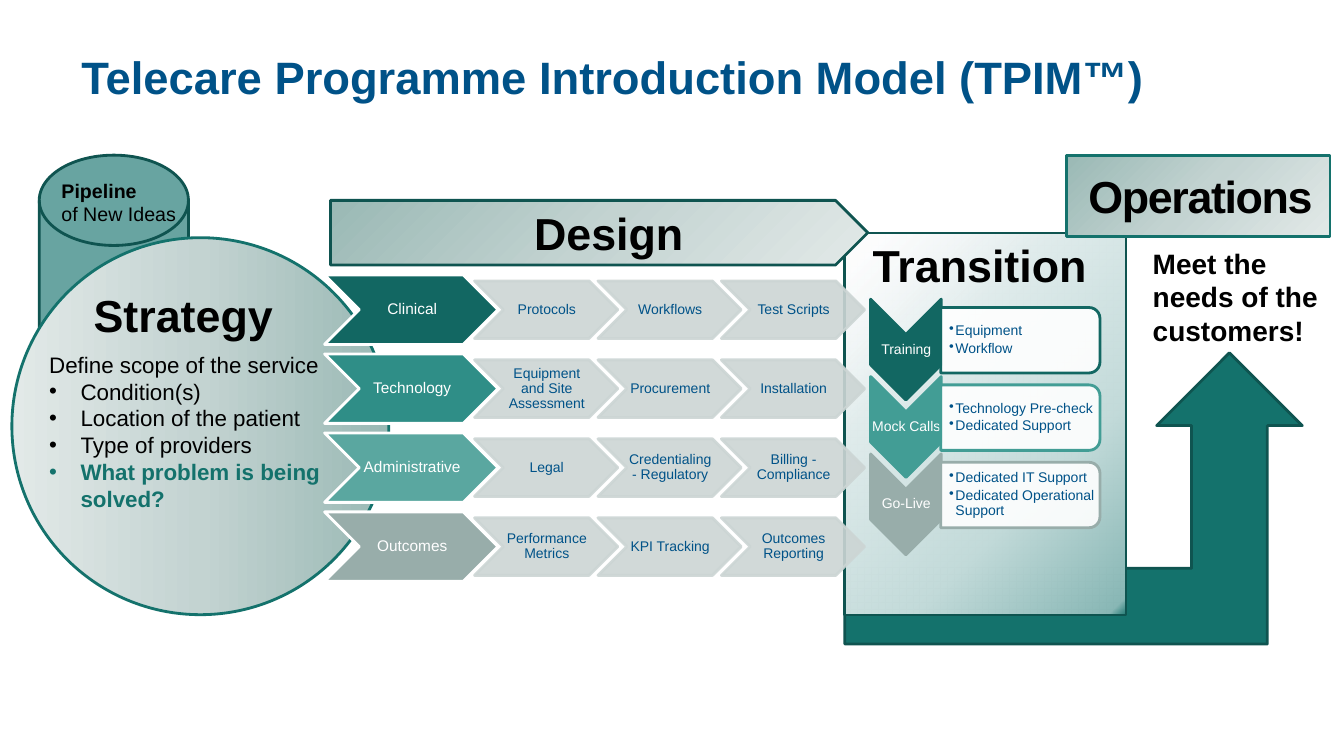
"""Build the telecare programme introduction model slide."""
from dataclasses import dataclass
from typing import Any, Optional

import lxml.etree
import pptx
import pptx.dml.color
import pptx.enum.shapes
import pptx.enum.text
import pptx.oxml.ns
import pptx.util

Cm = pptx.util.Cm
Pt = pptx.util.Pt
qn = pptx.oxml.ns.qn
Preset = pptx.enum.shapes.MSO_SHAPE
Anchor = pptx.enum.text.MSO_ANCHOR
Align = pptx.enum.text.PP_ALIGN

TEAL, DARK_TEAL, NAVY, BLACK, WHITE = "14726C", "0F5450", "005288", "000000", "FFFFFF"
PALE, GREY = "CCD5D4", "98ADAA"


@dataclass(frozen=True)
class Box:
    left: float
    top: float
    width: float
    height: float


@dataclass(frozen=True)
class Gradient:
    angle: int
    stops: tuple[tuple[int, str, int], ...]


@dataclass(frozen=True)
class Style:
    size: float
    color: str = BLACK
    bold: bool = False
    align: Any = Align.LEFT
    spacing: float = 1.0
    after: float = 0
    hang: float = 0
    tracking: int = 0


@dataclass(frozen=True)
class DesignRow:
    area: str
    color: str
    steps: tuple[str, str, str]


@dataclass(frozen=True)
class Stage:
    label: str
    color: str
    tasks: tuple[str, str]


@dataclass(frozen=True)
class Heading:
    text: str
    box: Box


MIST = ((0, "9AB9B5", 100), (50, "C3D3D1", 100), (100, "E2E9E8", 100))
STRATEGY_FILL = Gradient(180, MIST)
BANNER_FILL = Gradient(45, MIST)
TRANSITION_FILL = Gradient(225, (
    (0, TEAL, 100), (3, "88B7B5", 100), (32, "C2DAD9", 100),
    (68, "DFEBEB", 100), (96, "FCFCFD", 52)))

DESIGN_ROWS = (
    DesignRow("Clinical", "126762", ("Protocols", "Workflows", "Test Scripts")),
    DesignRow("Technology", "2F8E87",
              ("Equipment and Site Assessment", "Procurement", "Installation")),
    DesignRow("Administrative", "5AA7A0",
              ("Legal", "Credentialing - Regulatory", "Billing - Compliance")),
    DesignRow("Outcomes", GREY,
              ("Performance Metrics", "KPI Tracking", "Outcomes Reporting")),
)
STAGES = (
    Stage("Training", "126762", ("Equipment", "Workflow")),
    Stage("Mock Calls", "429D95", ("Technology Pre-check", "Dedicated Support")),
    Stage("Go-Live", GREY, ("Dedicated IT Support", "Dedicated Operational Support")),
)
HEADINGS = (
    Heading("Strategy", Box(2.11, 7.11, 5.26, 1.63)),
    Heading("Design", Box(13.21, 5.05, 4.29, 1.63)),
    Heading("Transition", Box(21.74, 5.87, 6.17, 1.63)),
)
ROW_PITCH, STEP_PITCH, STAGE_PITCH = 1.99, 3.11, 1.95

HEADING_STYLE = Style(32, bold=True)
AREA_STYLE = Style(11, WHITE, align=Align.CENTER, spacing=0.9)
STEP_STYLE = Style(10, NAVY, align=Align.CENTER, spacing=0.9)
STAGE_STYLE = Style(10, WHITE, align=Align.CENTER, spacing=0.9)
TASK_STYLE = Style(10, NAVY, spacing=0.9, after=1.5, hang=0.16)
TIGHT = (0.03, 0.03, 0.03, 0.03)
DEFAULT_INSETS = (0.25, 0.13, 0.25, 0.13)


def rgb(color: str) -> pptx.dml.color.RGBColor:
    """Turn a hex string into a colour."""
    return pptx.dml.color.RGBColor.from_string(color)


def add_alpha(parent: Any, percent: int) -> None:
    """Make every colour below an element partly transparent."""
    if percent < 100:
        for color in parent.iter(qn("a:srgbClr")):
            lxml.etree.SubElement(color, qn("a:alpha"), val=str(percent * 1000))


def apply_gradient(shape: Any, gradient: Gradient) -> None:
    """Fill a shape with a linear gradient of any number of stops."""
    shape.fill.gradient()
    fill = shape.element.spPr.find(qn("a:gradFill"))
    stops = fill.find(qn("a:gsLst"))
    for old_stop in list(stops):
        stops.remove(old_stop)
    for position, color, alpha in gradient.stops:
        stop = lxml.etree.SubElement(stops, qn("a:gs"), pos=str(position * 1000))
        lxml.etree.SubElement(stop, qn("a:srgbClr"), val=color)
        add_alpha(stop, alpha)
    fill.find(qn("a:lin")).set("ang", str(gradient.angle * 60000))


def draw(slide: Any, preset: Any, box: Box, fill: str | Gradient, line: str,
         fill_alpha: int = 100, line_alpha: int = 100, rotation: float = 0) -> Any:
    """Add a preset shape with a 2 pt outline."""
    shape = slide.shapes.add_shape(
        preset, Cm(box.left), Cm(box.top), Cm(box.width), Cm(box.height))
    shape.shadow.inherit = False
    shape.rotation = rotation
    if isinstance(fill, Gradient):
        apply_gradient(shape, fill)
    else:
        shape.fill.solid()
        shape.fill.fore_color.rgb = rgb(fill)
        add_alpha(shape.element.spPr.find(qn("a:solidFill")), fill_alpha)
    shape.line.color.rgb = rgb(line)
    shape.line.width = Pt(2)
    add_alpha(shape.element.spPr.find(qn("a:ln")), line_alpha)
    return shape


def write(shape: Any, entries: tuple[tuple[str, Style], ...], anchor: Any = Anchor.MIDDLE,
          insets: tuple[float, float, float, float] = DEFAULT_INSETS) -> None:
    """Put styled paragraphs into a shape."""
    frame = shape.text_frame
    frame.word_wrap = True
    frame.auto_size = pptx.enum.text.MSO_AUTO_SIZE.NONE
    frame.vertical_anchor = anchor
    (frame.margin_left, frame.margin_top,
     frame.margin_right, frame.margin_bottom) = map(Cm, insets)
    for index, (text, style) in enumerate(entries):
        paragraph = frame.paragraphs[0] if index == 0 else frame.add_paragraph()
        paragraph.text = text
        paragraph.alignment = style.align
        paragraph.line_spacing = style.spacing
        paragraph.space_before = Pt(0)
        paragraph.space_after = Pt(style.after)
        properties = paragraph._p.get_or_add_pPr()
        properties.set("marL", str(Cm(style.hang)))
        properties.set("indent", str(-Cm(style.hang)))
        if style.hang:
            lxml.etree.SubElement(properties, qn("a:buChar"), char="•")
        else:
            lxml.etree.SubElement(properties, qn("a:buNone"))
        paragraph.font.name = "Arial"
        paragraph.font.size = Pt(style.size)
        paragraph.font.bold = style.bold
        paragraph.font.color.rgb = rgb(style.color)
        if style.tracking:
            properties.find(qn("a:defRPr")).set("spc", str(style.tracking * 100))


def add_text(slide: Any, box: Box, entries: tuple[tuple[str, Style], ...],
             anchor: Any = Anchor.TOP,
             insets: tuple[float, float, float, float] = DEFAULT_INSETS) -> None:
    """Add a text box."""
    label = slide.shapes.add_textbox(
        Cm(box.left), Cm(box.top), Cm(box.width), Cm(box.height))
    write(label, entries, anchor, insets)


def move(shape: Any, box: Box) -> None:
    """Place a placeholder in front of everything drawn so far."""
    shape.left, shape.top = Cm(box.left), Cm(box.top)
    shape.width, shape.height = Cm(box.width), Cm(box.height)
    shape.element.getparent().append(shape.element)


def draw_design_row(slide: Any, row: DesignRow, offset: float) -> None:
    """Draw one area chevron followed by its steps."""
    area = draw(slide, Preset.CHEVRON, Box(8.18, 6.93 + offset, 4.37, 1.75), row.color, WHITE)
    write(area, ((row.area, AREA_STYLE),), insets=(0.05, 0.03, 0, 0.03))
    for column, text in enumerate(row.steps):
        step = draw(slide, Preset.CHEVRON,
                    Box(11.96 + column * STEP_PITCH, 7.08 + offset, 3.61, 1.45),
                    PALE, PALE, fill_alpha=90, line_alpha=90)
        write(step, ((text, STEP_STYLE),), insets=(0.03, 0.03, 0, 0.03))


def draw_stage(slide: Any, stage: Stage, offset: float) -> None:
    """Draw one downward chevron with its task panel."""
    draw(slide, Preset.CHEVRON, Box(21.56, 7.92 + offset, 2.54, 1.78),
         stage.color, stage.color, rotation=90)
    add_text(slide, Box(21.95, 8.43 + offset, 1.78, 0.76),
             ((stage.label, STAGE_STYLE),), Anchor.MIDDLE, TIGHT)
    draw(slide, Preset.ROUND_2_SAME_RECTANGLE, Box(24.89, 6.57 + offset, 1.65, 4.01),
         WHITE, stage.color, fill_alpha=90, rotation=90)
    add_text(slide, Box(23.72, 7.83 + offset, 3.94, 1.47),
             tuple((task, TASK_STYLE) for task in stage.tasks),
             Anchor.MIDDLE, (0.2, 0.03, 0.03, 0.03))


def main() -> None:
    """Assemble and save the slide."""
    deck = pptx.Presentation()
    deck.slide_width, deck.slide_height = Cm(33.87), Cm(19.05)
    slide = deck.slides.add_slide(deck.slide_layouts[1])
    title, scope = slide.placeholders

    draw(slide, Preset.FLOWCHART_MAGNETIC_DISK, Box(0.99, 3.91, 3.76, 6.83),
         TEAL, DARK_TEAL, fill_alpha=64)
    delivery = draw(slide, Preset.BENT_UP_ARROW, Box(21.29, 8.89, 11.53, 7.34), TEAL, DARK_TEAL)
    delivery.adjustments[0] = 0.26
    draw(slide, Preset.RECTANGLE, Box(21.29, 5.87, 7.09, 9.63), TRANSITION_FILL, DARK_TEAL)
    draw(slide, Preset.OVAL, Box(0.3, 5.99, 9.5, 9.5), STRATEGY_FILL, TEAL)
    for index, row in enumerate(DESIGN_ROWS):
        draw_design_row(slide, row, index * ROW_PITCH)
    draw(slide, Preset.PENTAGON, Box(8.33, 5.05, 13.54, 1.63), BANNER_FILL, DARK_TEAL)
    for index, stage in enumerate(STAGES):
        draw_stage(slide, stage, index * STAGE_PITCH)
    for heading in HEADINGS:
        add_text(slide, heading.box, ((heading.text, HEADING_STYLE),))

    operations = draw(slide, Preset.RECTANGLE, Box(26.87, 3.91, 6.65, 2.06), BANNER_FILL, TEAL)
    write(operations, (("Operations", Style(32, bold=True, tracking=-1)),),
          insets=(0.56, 0.13, 0, 0.13))
    add_text(slide, Box(28.8, 6.07, 4.72, 2.82),
             (("Meet the needs of the customers!", Style(20, bold=True)),))
    add_text(slide, Box(1.3, 4.37, 3.76, 1.45),
             (("Pipeline", Style(14, bold=True)), ("of New Ideas", Style(14))))

    move(scope, Box(0.99, 8.71, 7.52, 5.13))
    scope_item = Style(16, hang=0.79)
    write(scope, (
        ("Define scope of the service", Style(16)),
        ("Condition(s)", scope_item),
        ("Location of the patient", scope_item),
        ("Type of providers", scope_item),
        ("What problem is being solved?", Style(16, TEAL, bold=True, hang=0.79)),
    ), Anchor.TOP)
    move(title, Box(1.8, 0.33, 30.48, 3.18))
    write(title, (("Telecare Programme Introduction Model (TPIM™)",
                   Style(32.4, NAVY, bold=True)),))
    deck.save("out.pptx")


if __name__ == "__main__":
    main()
